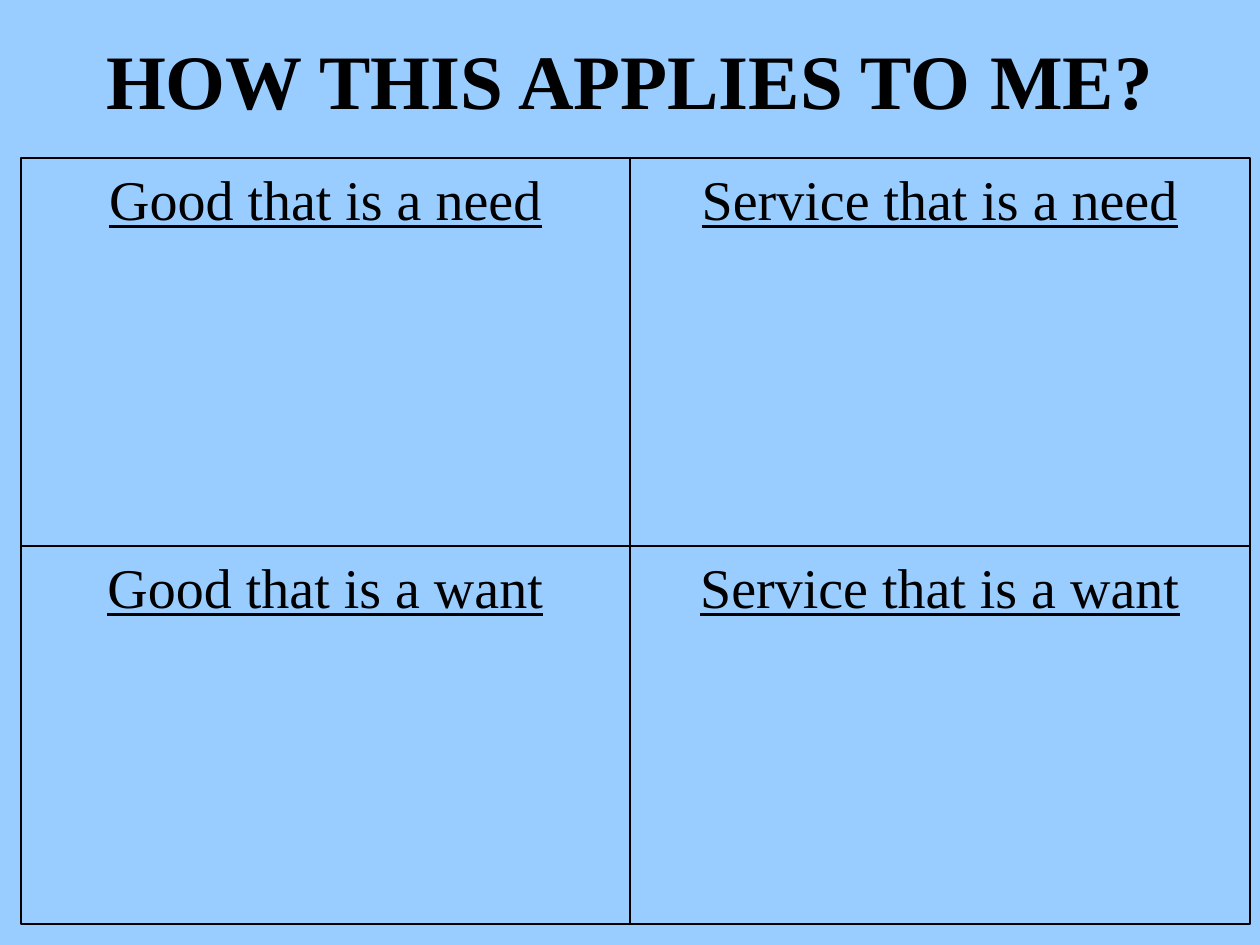
from pptx import Presentation
from pptx.dml.color import RGBColor
from pptx.enum.shapes import MSO_SHAPE
from pptx.enum.text import MSO_ANCHOR, PP_ALIGN
from pptx.util import Emu, Pt

RECTANGLE = MSO_SHAPE.RECTANGLE
TOP, MIDDLE = MSO_ANCHOR.TOP, MSO_ANCHOR.MIDDLE
CENTER = PP_ALIGN.CENTER

PX_PER_INCH = 126
SLIDE_W, SLIDE_H = 1260, 945
SKY, BLACK = "99CCFF", "000000"
FONT = "Times New Roman"

KINDS = ("Good", "Service")
REASONS = ("need", "want")


def px(length):
    return Emu(round(length * 914400 / PX_PER_INCH))


def color(hex_value):
    return RGBColor.from_string(hex_value)


def write(shape, text, size, anchor=TOP, bold=False, underline=False, space_before=0):
    frame = shape.text_frame
    frame.word_wrap = True
    frame.vertical_anchor = anchor
    paragraph = frame.paragraphs[0]
    paragraph.alignment = CENTER
    paragraph.space_before = Pt(space_before)
    run = paragraph.add_run()
    run.text = text
    run.font.name = FONT
    run.font.size = Pt(size)
    run.font.bold = bold
    run.font.underline = underline
    run.font.color.rgb = color(BLACK)


def add_title(slide, left, top, width, height):
    title = slide.shapes.add_textbox(px(left), px(top), px(width), px(height))
    write(title, "HOW THIS APPLIES TO ME?", 44, anchor=MIDDLE, bold=True)


def add_quadrant(slide, heading, left, top, width, height):
    quadrant = slide.shapes.add_shape(RECTANGLE, px(left), px(top), px(width), px(height))
    quadrant.shadow.inherit = False
    quadrant.fill.background()
    quadrant.line.color.rgb = color(BLACK)
    quadrant.line.width = Pt(0.75)
    write(quadrant, heading, 32, underline=True, space_before=3.6)


def add_matrix(slide, left, top, widths, heights):
    """Place goods and services in columns, needs and wants in rows."""
    for row, reason in enumerate(REASONS):
        for column, kind in enumerate(KINDS):
            add_quadrant(
                slide,
                f"{kind} that is a {reason}",
                left + sum(widths[:column]),
                top + sum(heights[:row]),
                widths[column],
                heights[row],
            )


def main():
    presentation = Presentation()
    presentation.slide_width = px(SLIDE_W)
    presentation.slide_height = px(SLIDE_H)
    slide = presentation.slides.add_slide(presentation.slide_layouts[6])
    slide.background.fill.solid()
    slide.background.fill.fore_color.rgb = color(SKY)

    add_title(slide, 0, 0, SLIDE_W, 158)
    add_matrix(slide, 21, 158, widths=(609, 620), heights=(388, 378))
    presentation.save("out.pptx")


if __name__ == "__main__":
    main()
